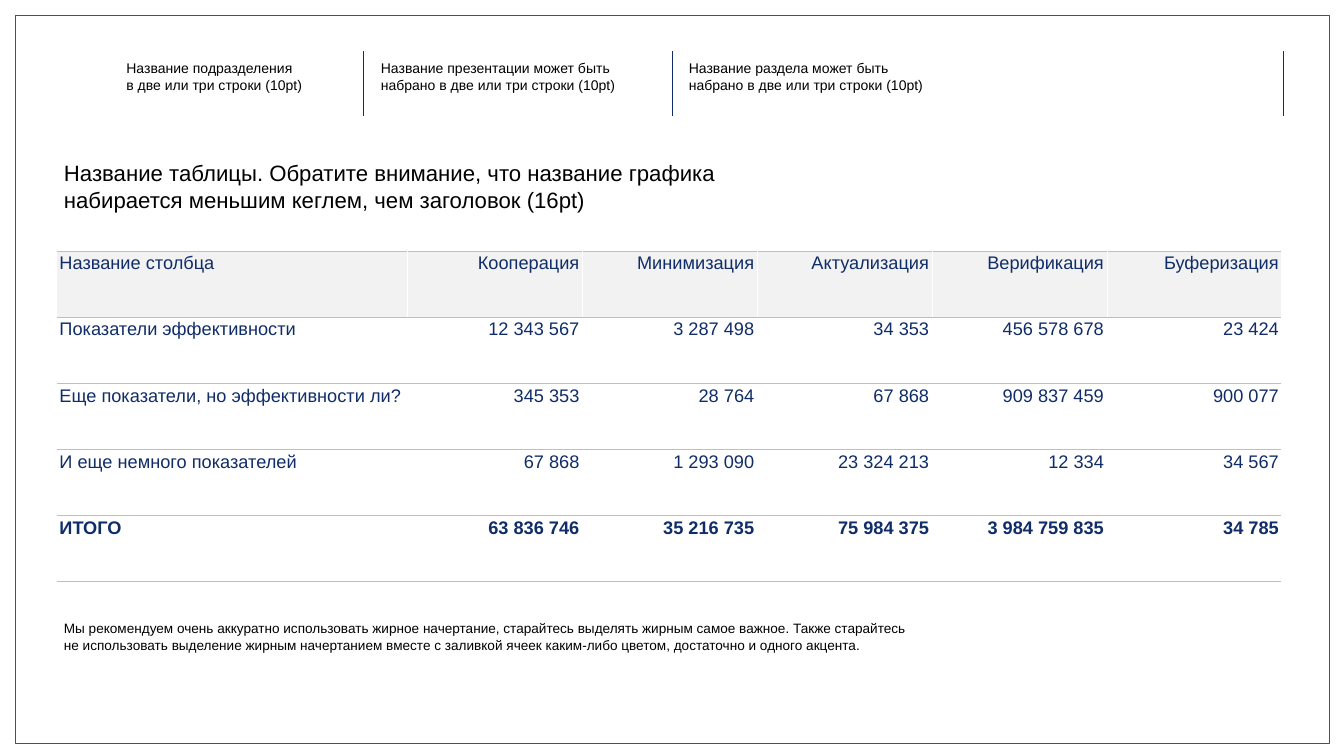
from lxml import etree
from pptx import Presentation
from pptx.dml.color import RGBColor
from pptx.enum import shapes, text
from pptx.oxml import ns
from pptx.util import Inches, Pt

NAVY = RGBColor(0x10, 0x2D, 0x69)
FRAME_BLUE = RGBColor(0x32, 0x53, 0x8F)
BLACK = RGBColor(0, 0, 0)
WHITE = RGBColor(0xFF, 0xFF, 0xFF)
RULE_GRAY = RGBColor(0xBF, 0xBF, 0xBF)
HEADER_GRAY = RGBColor(0xF2, 0xF2, 0xF2)


def add_text(slide, left, top, width, height, size, paragraphs):
    box = slide.shapes.add_textbox(Inches(left), Inches(top), Inches(width), Inches(height))
    frame = box.text_frame
    frame.word_wrap = True
    frame.margin_left = frame.margin_right = Inches(0.1)
    frame.margin_top = frame.margin_bottom = Inches(0.1)
    for index, content in enumerate(paragraphs):
        paragraph = frame.add_paragraph() if index else frame.paragraphs[0]
        paragraph.text = content
        paragraph.font.name = "Arial"
        paragraph.font.size = Pt(size)
        paragraph.font.color.rgb = BLACK


def set_border(cell, side, color, width):
    """Draw one cell side (L, R, T or B, in that order); no color hides it."""
    properties = cell._tc.get_or_add_tcPr()
    line = etree.SubElement(properties, ns.qn(f"a:ln{side}"), w=str(Pt(width)))
    if color is None:
        etree.SubElement(line, ns.qn("a:noFill"))
    else:
        fill = etree.SubElement(line, ns.qn("a:solidFill"))
        etree.SubElement(fill, ns.qn("a:srgbClr"), val=str(color))


presentation = Presentation()
presentation.slide_width = Inches(26.67)
presentation.slide_height = Inches(15)
slide = presentation.slides.add_slide(presentation.slide_layouts[6])

# Page frame
page_frame = slide.shapes.add_shape(
    shapes.MSO_SHAPE.RECTANGLE, Inches(0.29), Inches(0.3), Inches(26.09), Inches(14.44))
page_frame.shadow.inherit = False
page_frame.fill.solid()
page_frame.fill.fore_color.rgb = WHITE
page_frame.line.color.rgb = FRAME_BLUE
page_frame.line.width = Pt(0.25)

# Header dividers and captions
for x in (7.21, 13.34, 25.47):
    divider = slide.shapes.add_connector(
        shapes.MSO_CONNECTOR.STRAIGHT, Inches(x), Inches(1.02), Inches(x), Inches(2.3))
    divider.line.color.rgb = NAVY
    divider.line.width = Pt(0.75)
    etree.SubElement(divider._element.spPr, ns.qn("a:effectLst"))

for left, height, caption in (
    (2.41, 0.87, "Название подразделения\vв две или три строки (10pt)"),
    (7.46, 1.2, "Название презентации может быть набрано в две или три строки (10pt)"),
    (13.57, 1.2, "Название раздела может быть набрано в две или три строки (10pt)"),
):
    add_text(slide, left, 1.09, 4.93, height, 20, [caption])

# Table title and note
add_text(slide, 1.17, 3.06, 16.98, 1.26, 31.7, [
    "Название таблицы. Обратите внимание, что название графика",
    "набирается меньшим кеглем, чем заголовок (16pt)",
])
add_text(slide, 1.17, 12.21, 16.98, 1.2, 19.4, [
    "Мы рекомендуем очень аккуратно использовать жирное начертание, "
    "старайтесь выделять жирным самое важное. Также старайтесь "
    "не использовать выделение жирным начертанием вместе с заливкой ячеек "
    "каким-либо цветом, достаточно и одного акцента.",
])

# Table
rows = [
    ["Название столбца", "Кооперация", "Минимизация", "Актуализация", "Верификация", "Буферизация"],
    ["Показатели эффективности", "12 343 567", "3 287 498", "34 353", "456 578 678", "23 424"],
    ["Еще показатели, но эффективности ли?", "345 353", "28 764", "67 868", "909 837 459", "900 077"],
    ["И еще немного показателей", "67 868", "1 293 090", "23 324 213", "12 334", "34 567"],
    ["ИТОГО", "63 836 746", "35 216 735", "75 984 375", "3 984 759 835", "34 785"],
]
last_row, last_column = len(rows) - 1, len(rows[0]) - 1
table = slide.shapes.add_table(
    len(rows), len(rows[0]), Inches(1.13), Inches(4.98), Inches(24.32), Inches(6.54)).table
table.first_row = False
table.horz_banding = False
for index, column in enumerate(table.columns):
    column.width = Inches(3.47 if index else 6.95)
for row in table.rows:
    row.height = Inches(1.31)

for row_index, values in enumerate(rows):
    for column_index, value in enumerate(values):
        cell = table.cell(row_index, column_index)
        cell.margin_left = cell.margin_right = Inches(0.05)
        cell.margin_top = cell.margin_bottom = Inches(0.05)
        set_border(cell, "L", WHITE if column_index else None, 0.25)
        set_border(cell, "R", WHITE if column_index < last_column else None, 0.25)
        set_border(cell, "T", RULE_GRAY, 1)
        set_border(cell, "B", RULE_GRAY, 1)
        if row_index == 0:
            cell.fill.solid()
            cell.fill.fore_color.rgb = HEADER_GRAY
        else:
            cell.fill.background()
        paragraph = cell.text_frame.paragraphs[0]
        paragraph.text = value
        paragraph.alignment = text.PP_ALIGN.RIGHT if column_index else text.PP_ALIGN.LEFT
        paragraph.font.name = "Arial"
        paragraph.font.size = Pt(26)
        paragraph.font.bold = row_index == last_row
        paragraph.font.color.rgb = NAVY

presentation.save("out.pptx")
